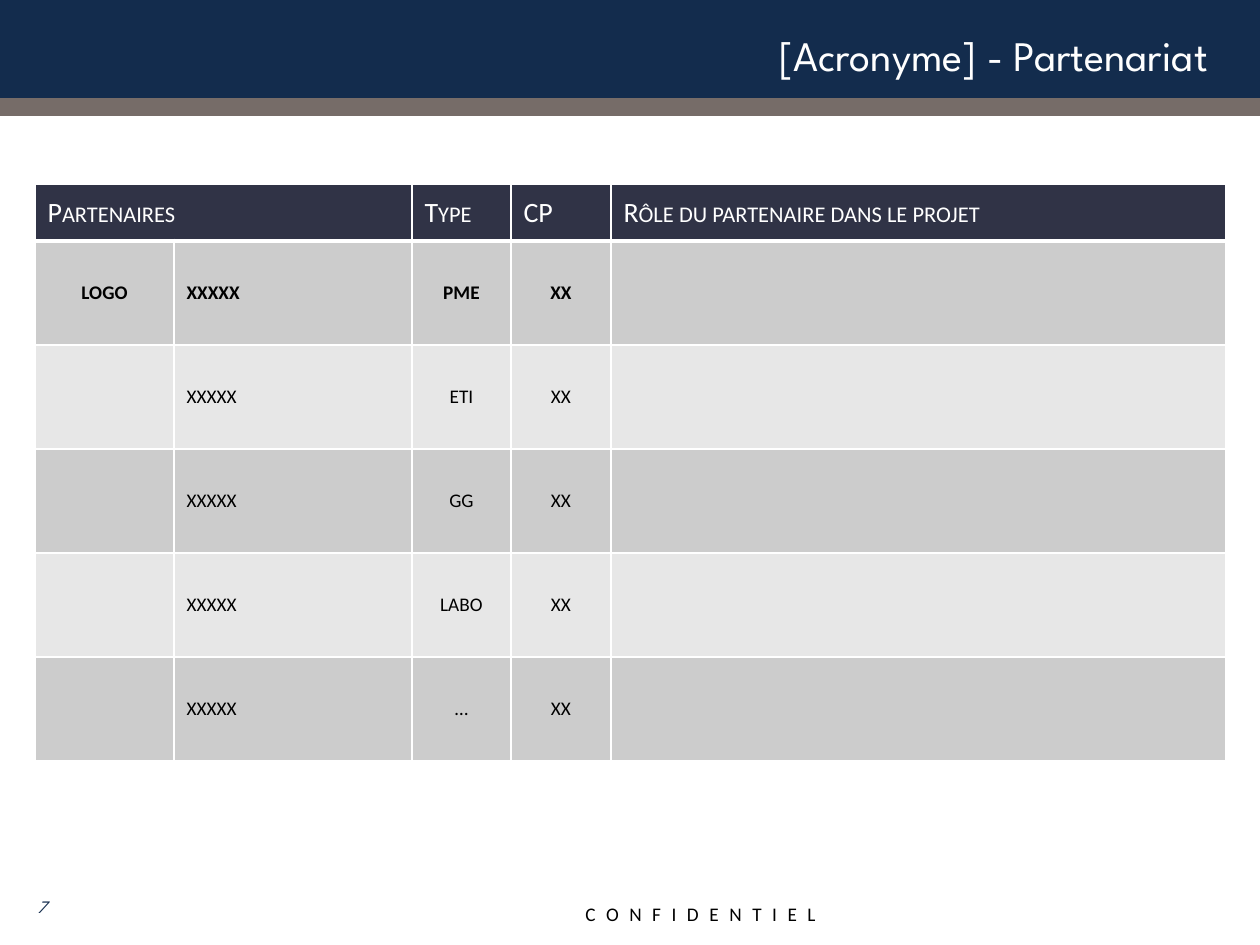
from lxml.etree import SubElement as Sub
from pptx import Presentation
from pptx.dml.color import RGBColor as Rgb
from pptx.enum.shapes import MSO_SHAPE as Shape
from pptx.enum.text import MSO_ANCHOR as Anchor, PP_ALIGN as Align
from pptx.oxml.ns import qn
from pptx.util import Emu, Pt

HUES = {
    "navy": "132C4D", "taupe": "766C68", "head": "303346",
    "dark": "CCCCCC", "light": "E7E7E7", "white": "FFFFFF", "black": "000000",
}
BODY = "Calibri"
HEAD = "League Spartan"
ROWS = [
    ["Partenaires", "", "Type", "CP", "Rôle du partenaire dans le projet"],
    ["LOGO", "XXXXX", "PME", "XX", ""],
    ["", "XXXXX", "ETI", "XX", ""],
    ["", "XXXXX", "GG", "XX", ""],
    ["", "XXXXX", "LABO", "XX", ""],
    ["", "XXXXX", "…", "XX", ""],
]


def px(num):
    return Emu(round(num * 914400 / 126))


def hue(name):
    return Rgb.from_string(HUES[name])


class Deck:
    def __init__(self):
        self.prs = Presentation()
        self.prs.slide_width, self.prs.slide_height = px(1260), px(945)
        self.slide = self.prs.slides.add_slide(self.prs.slide_layouts[5])
        self.shapes = self.slide.shapes

    def style(self, para, size, color, face=BODY, align=Align.LEFT, bold=False):
        para.alignment = align
        font = para.font
        font.name, font.size, font.bold = face, Pt(size), bold
        font.color.rgb = hue(color)

    def band(self, top, height, color):
        bar = self.shapes.add_shape(Shape.RECTANGLE, 0, px(top), px(1260), px(height))
        bar.shadow.inherit = False
        bar.fill.solid()
        bar.fill.fore_color.rgb = hue(color)
        bar.line.fill.background()

    def title(self, text, box):
        head = self.shapes.title
        head.left, head.top, head.width, head.height = map(px, box)
        frame = head.text_frame
        frame.text = text
        frame.vertical_anchor = Anchor.MIDDLE
        frame.margin_right = px(24)
        self.style(frame.paragraphs[0], 24, "white", HEAD, Align.RIGHT)
        self.shapes._spTree.append(head._element)

    def text(self, text, box, size, color, face=BODY, align=Align.LEFT,
             wrap=True, anchor=Anchor.TOP, gap=0, slant=False):
        frame = self.shapes.add_textbox(*map(px, box)).text_frame
        frame.word_wrap = wrap
        frame.vertical_anchor = anchor
        para = frame.paragraphs[0]
        run = para.add_run()
        run.text = text
        self.style(para, size, color, face, align)
        para.font.italic = slant
        if gap:
            run.font._element.set("spc", str(gap * 100))

    def edge(self, cell, last):
        props = cell._tc.get_or_add_tcPr()
        for side in "LRTB":
            wide = 3 if side == last else 1
            line = Sub(props, qn(f"a:ln{side}"), w=str(Pt(wide)))
            fill = Sub(line, qn("a:solidFill"))
            Sub(fill, qn("a:srgbClr"), val=HUES["white"])

    def cell(self, cell, text, row, col):
        top = row == 0
        self.edge(cell, "B" if top else "T" if row == 1 else None)
        cell.fill.solid()
        cell.fill.fore_color.rgb = hue("head" if top else "dark" if row % 2 else "light")
        cell.vertical_anchor = Anchor.MIDDLE
        para = cell.text_frame.paragraphs[0]
        mid = not top and col in (0, 2, 3)
        if text:
            run = para.add_run()
            run.text = text
            if top:
                run.font._element.set("cap", "small")
        self.style(para, 16 if top else 11, "white" if top else "black",
                   align=Align.CENTER if mid else Align.LEFT, bold=row == 1)

    def table(self, rows, left, top, wide, high):
        grid = self.shapes.add_table(len(rows), len(wide), px(left), px(top),
                                     px(sum(wide)), px(sum(high))).table
        for col, size in zip(grid.columns, wide):
            col.width = px(size)
        for row, size in zip(grid.rows, high):
            row.height = px(size)
        for i, row in enumerate(rows):
            for j, text in enumerate(row):
                self.cell(grid.cell(i, j), text, i, j)
        grid.cell(0, 0).merge(grid.cell(0, 1))


def main():
    deck = Deck()
    deck.band(0, 113, "navy")
    deck.band(98, 18, "taupe")
    deck.text("CONFIDENTIEL", (573, 896, 268, 37), 11, "black", wrap=False, gap=6)
    deck.title("[Acronyme] - Partenariat", (19, 18, 1213, 73))
    deck.text("7", (-5, 882, 64, 50), 10, "navy", HEAD, Align.RIGHT,
              anchor=Anchor.MIDDLE, slant=True)
    deck.table(ROWS, 35, 184, [139, 238, 99, 100, 615], [57] + [104] * 5)
    deck.prs.save("out.pptx")


if __name__ == "__main__":
    main()
